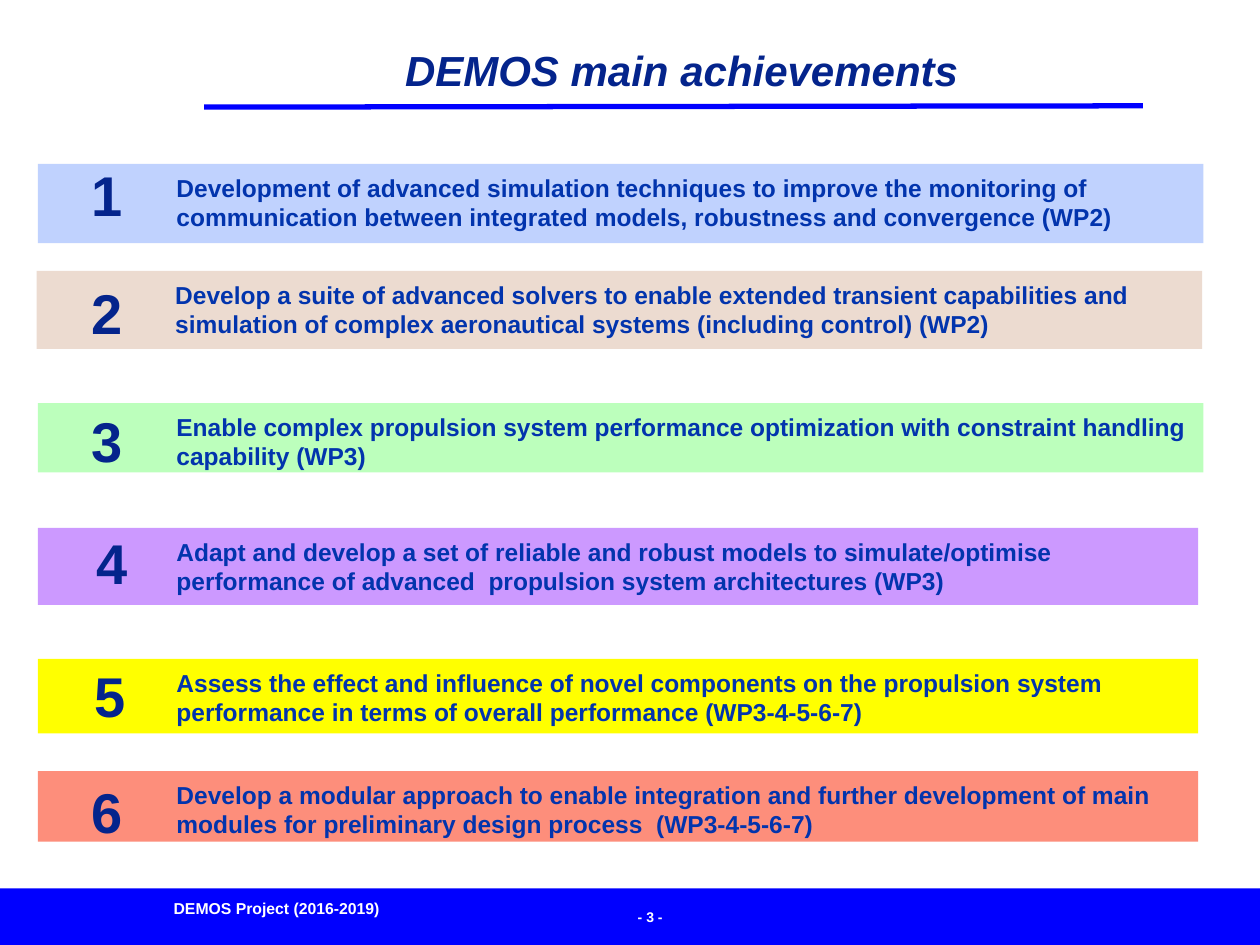
import pptx
import pptx.dml.color
import pptx.enum.shapes
import pptx.enum.text
import pptx.oxml.ns
import pptx.util
from lxml import etree

Inches = pptx.util.Inches
ALIGN = pptx.enum.text.PP_ALIGN
ANCHOR = pptx.enum.text.MSO_ANCHOR

COLOURS = {
    "blue": "0000FF",
    "navy": "04248C",
    "text": "0234AD",
    "white": "FFFFFF",
    "sky": "C0D2FE",
    "sand": "ECDBD0",
    "green": "BCFFBC",
    "violet": "CC99FF",
    "yellow": "FFFF00",
    "salmon": "FD8E7B",
}

# left, top, width, height of the band; centre of the number; colour; wording
ACHIEVEMENTS = [
    (0.3, 1.3, 9.25, 0.63, 0.85, 1.54, "sky",
     "Development of advanced simulation techniques to improve the monitoring of "
     "communication between integrated models, robustness and convergence (WP2)"),
    (0.29, 2.15, 9.25, 0.62, 0.85, 2.48, "sand",
     "Develop a suite of advanced solvers to enable extended transient capabilities and "
     "simulation of complex aeronautical systems (including control) (WP2)"),
    (0.3, 3.2, 9.25, 0.55, 0.85, 3.49, "green",
     "Enable complex propulsion system performance optimization with constraint handling "
     "capability (WP3)"),
    (0.3, 4.19, 9.21, 0.61, 0.89, 4.46, "violet",
     "Adapt and develop a set of reliable and robust models to simulate/optimise "
     "performance of advanced  propulsion system architectures (WP3)"),
    (0.3, 5.23, 9.21, 0.59, 0.87, 5.52, "yellow",
     "Assess the effect and influence of novel components on the propulsion system "
     "performance in terms of overall performance (WP3-4-5-6-7)"),
    (0.3, 6.12, 9.21, 0.56, 0.85, 6.44, "salmon",
     "Develop a modular approach to enable integration and further development of main "
     "modules for preliminary design process  (WP3-4-5-6-7)"),
]


def rgb(name):
    return pptx.dml.color.RGBColor.from_string(COLOURS[name])


def write(shape, text, size, colour, align=ALIGN.LEFT, anchor=ANCHOR.MIDDLE,
          italic=False, **margins):
    frame = shape.text_frame
    frame.text = text
    frame_format = {"word_wrap": True, "auto_size": pptx.enum.text.MSO_AUTO_SIZE.NONE,
                    "vertical_anchor": anchor}
    frame_format.update({side: Inches(gap) for side, gap in margins.items()})
    for name, value in frame_format.items():
        setattr(frame, name, value)
    paragraph = frame.paragraphs[0]
    paragraph.alignment = align
    font_format = {"name": "Arial", "size": pptx.util.Pt(size), "bold": True, "italic": italic}
    for name, value in font_format.items():
        setattr(paragraph.font, name, value)
    paragraph.font.color.rgb = rgb(colour)


def add_band(slide, left, top, width, height, colour):
    band = slide.shapes.add_shape(
        pptx.enum.shapes.MSO_SHAPE.RECTANGLE,
        Inches(left), Inches(top), Inches(width), Inches(height))
    band.shadow.inherit = False
    band.fill.solid()
    band.fill.fore_color.rgb = rgb(colour)
    band.line.fill.background()
    return band


def add_label(slide, left, top, width, height, text, size, colour, **text_format):
    label = slide.shapes.add_textbox(Inches(left), Inches(top), Inches(width), Inches(height))
    write(label, text, size, colour, **text_format)


def add_title(slide, text):
    title = slide.shapes.title
    place = {"left": 1.63, "top": 0.27, "width": 7.56, "height": 0.69}
    for name, value in place.items():
        setattr(title, name, Inches(value))
    write(title, text, 24, "navy", align=ALIGN.CENTER, anchor=ANCHOR.TOP,
          italic=True, margin_top=0.08)


def add_title_rule(slide):
    rule = slide.shapes.add_connector(
        pptx.enum.shapes.MSO_CONNECTOR.STRAIGHT,
        Inches(1.62), Inches(0.85), Inches(9.07), Inches(0.84))
    rule.line.color.rgb = rgb("blue")
    rule.line.width = pptx.util.Pt(3)
    etree.SubElement(rule.element.spPr, pptx.oxml.ns.qn("a:effectLst"))


def add_achievement(slide, number, left, top, width, height, centre_x, centre_y, colour, text):
    band = add_band(slide, left, top, width, height, colour)
    write(band, text, 14, "text", anchor=ANCHOR.TOP, margin_left=1.1, margin_top=0.07)
    side = 0.6
    add_label(slide, centre_x - side / 2, centre_y - side / 2, side, side,
              str(number), 32, "navy", align=ALIGN.CENTER)


def add_footer(slide):
    add_band(slide, 0, 7.05, 10, 0.45, "blue")
    add_label(slide, 4.62, 7.16, 1.08, 0.23, "- 3 -", 8, "white", align=ALIGN.CENTER)
    add_label(slide, 1.28, 7.08, 2.96, 0.25, "DEMOS Project (2016-2019)", 9, "white")


def main():
    deck = pptx.Presentation()
    deck.slide_width, deck.slide_height = Inches(10), Inches(7.5)
    slide = deck.slides.add_slide(deck.slide_layouts.get_by_name("Title Only"))
    add_footer(slide)
    add_title_rule(slide)
    add_title(slide, "DEMOS main achievements")
    for number, achievement in enumerate(ACHIEVEMENTS, start=1):
        add_achievement(slide, number, *achievement)
    deck.save("out.pptx")


if __name__ == "__main__":
    main()
